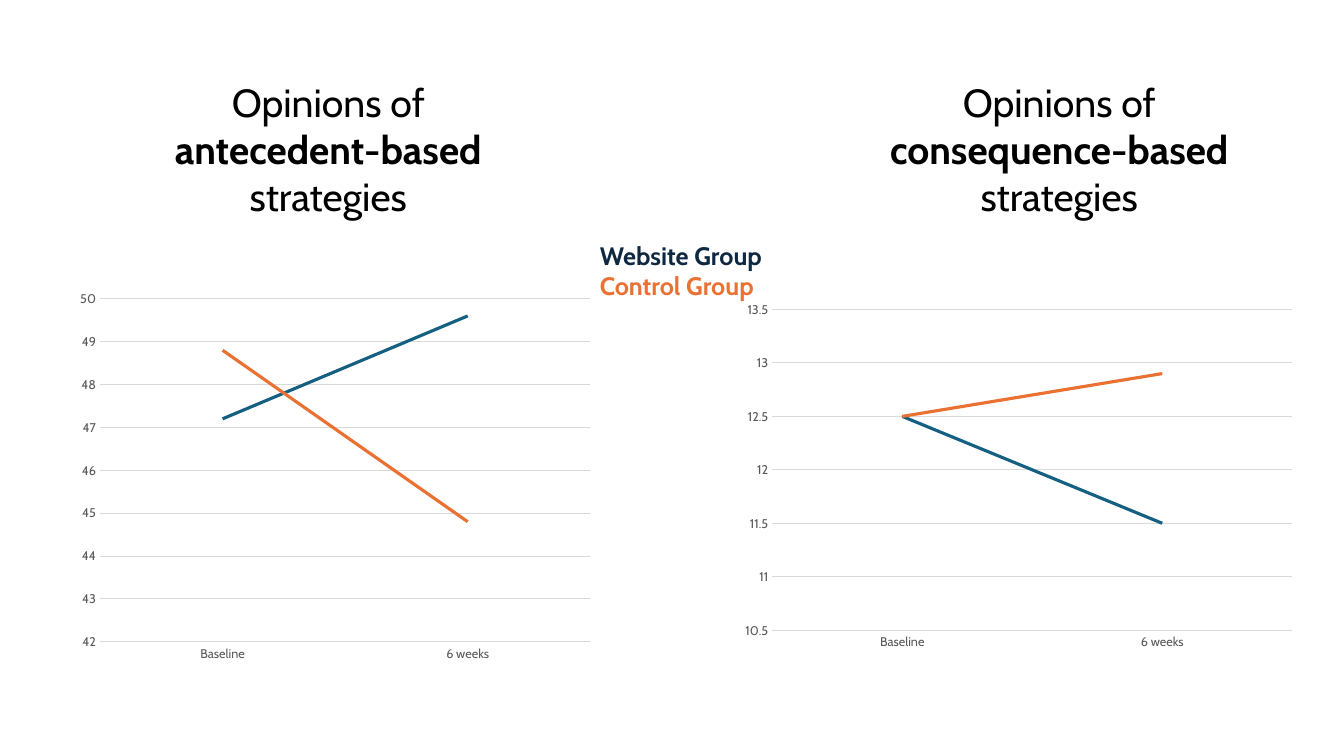
from pptx import Presentation
from pptx import util as u
from pptx.chart.data import CategoryChartData
from pptx.dml.color import RGBColor
from pptx.enum import chart as ch, text

FONT = "Cabin"
BLACK, GREY, GRID = "000000", "595959", "D9D9D9"
NAVY, TEAL, ORANGE = "0E2841", "156082", "E97132"


def rgb(value):
    return RGBColor.from_string(value)


def set_font(font, size, color, bold=False):
    for name, value in dict(name=FONT, size=u.Pt(size), bold=bold).items():
        setattr(font, name, value)
    font.color.rgb = rgb(color)


def set_line(line, color, width):
    line.color.rgb = rgb(color)
    line.width = u.Pt(width)


def add_text(s, box, paragraphs, size, align, wrap=True):
    """Each paragraph is a list of (wording, colour, bold) runs."""
    tf = s.shapes.add_textbox(*map(u.Inches, box)).text_frame
    tf.word_wrap = wrap
    tf.auto_size = text.MSO_AUTO_SIZE.SHAPE_TO_FIT_TEXT
    for i, runs in enumerate(paragraphs):
        p = tf.add_paragraph() if i else tf.paragraphs[0]
        p.alignment = align
        for wording, color, bold in runs:
            r = p.add_run()
            r.text = wording
            set_font(r.font, size, color, bold)


def add_title(s, box, strategy):
    runs = [("Opinions of ", BLACK, False), (strategy, BLACK, True),
            (" strategies", BLACK, False)]
    add_text(s, box, [runs], 28, text.PP_ALIGN.CENTER)


def add_line_chart(s, box, website, control, low, high, step):
    data = CategoryChartData(number_format="General")
    data.categories = ["Baseline", "6 weeks"]
    data.add_series("Website Group", website)
    data.add_series("Control Group", control)
    chart = s.shapes.add_chart(ch.XL_CHART_TYPE.LINE, *map(u.Inches, box), data).chart
    set_font(chart.font, 10, BLACK)
    chart.has_legend = chart.has_title = False

    # Axes and gridlines
    cat, val = chart.category_axis, chart.value_axis
    for axis in (cat, val):
        axis.major_tick_mark = axis.minor_tick_mark = ch.XL_TICK_MARK.NONE
        set_font(axis.tick_labels.font, 9, GREY)
    set_line(cat.format.line, GRID, 0.75)
    val.format.line.fill.background()
    scale = dict(minimum_scale=low, maximum_scale=high, major_unit=step,
                 has_major_gridlines=True)
    for name, value in scale.items():
        setattr(val, name, value)
    set_line(val.major_gridlines.format.line, GRID, 0.75)

    # Series
    chart.plots[0].vary_by_categories = False
    for series, color in zip(chart.plots[0].series, (TEAL, ORANGE)):
        series.smooth = False
        series.marker.style = ch.XL_MARKER_STYLE.NONE
        set_line(series.format.line, color, 2.25)


def main():
    prs = Presentation()
    prs.slide_width, prs.slide_height = u.Inches(13.33), u.Inches(7.5)
    s = prs.slides.add_slide(prs.slide_layouts[6])

    # Titles
    add_title(s, (1.37, 0.73, 3.77, 1.51), "antecedent-based")
    add_title(s, (8.55, 0.73, 3.91, 1.51), "consequence-based")

    # Shared legend
    legend = [[("Website Group", NAVY, True)], [("Control Group", ORANGE, True)]]
    add_text(s, (5.85, 2.33, 1.91, 0.71), legend, 18, text.PP_ALIGN.LEFT, wrap=False)

    # Charts
    add_line_chart(s, (0.69, 2.81, 5.27, 3.83), (47.2, 49.6), (48.8, 44.8), 42, 50, 1)
    add_line_chart(s, (7.28, 2.92, 5.65, 3.6), (12.5, 11.5), (12.5, 12.9), 10.5, 13.5, 0.5)

    prs.save("out.pptx")


if __name__ == "__main__":
    main()
